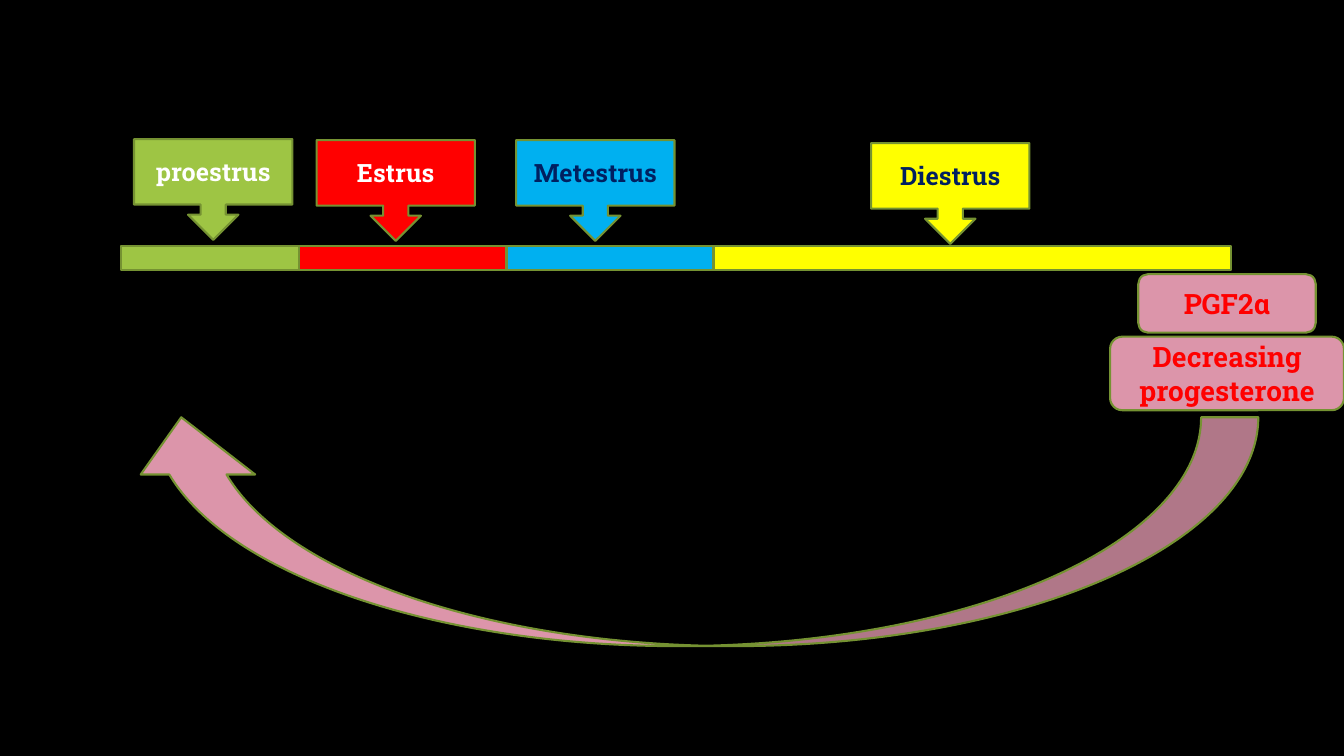
from dataclasses import dataclass

from pptx import Presentation
from pptx.dml.color import RGBColor
from pptx.enum import shapes, text
from pptx.util import Inches, Pt

MSO = shapes.MSO_SHAPE
FONT = "Roboto Slab"
COLORS = {
    "black": "000000", "white": "FFFFFF", "navy": "002060", "red": "FF0000",
    "green": "9EC544", "blue": "00B0F0", "yellow": "FFFF00", "pink": "DC95AA",
    "outline": "759232",
}


@dataclass
class Phase:
    name: str
    fill: str
    ink: str
    bar_left: float
    bar_width: float
    callout_left: float
    callout_top: float


@dataclass
class Hormone:
    name: str
    left: float
    top: float
    width: float
    height: float


PHASES = [
    Phase("proestrus", "green", "white", 0.87, 2.49, 1.33, 1.38),
    Phase("Estrus", "red", "white", 2.59, 2.82, 3.14, 1.39),
    Phase("Metestrus", "blue", "navy", 4.65, 2.82, 5.12, 1.39),
    Phase("Diestrus", "yellow", "navy", 6.15, 6.99, 8.64, 1.42),
]
HORMONES = [
    Hormone("PGF2α", 11.29, 2.72, 1.76, 0.58),
    Hormone("Decreasing progesterone", 11.01, 3.34, 2.32, 0.73),
]


def color(name: str) -> RGBColor:
    return RGBColor.from_string(COLORS[name])


def add_figure(slide, kind, left: float, top: float, width: float, height: float, fill: str):
    sp = slide.shapes.add_shape(kind, Inches(left), Inches(top), Inches(width), Inches(height))
    sp.shadow.inherit = False
    sp.fill.solid()
    sp.fill.fore_color.rgb = color(fill)
    sp.line.color.rgb = color("outline")
    sp.line.width = Pt(1.5)
    return sp


def add_label(sp, label: str, size: int, ink: str) -> None:
    tf = sp.text_frame
    tf.word_wrap = True
    tf.vertical_anchor = text.MSO_ANCHOR.MIDDLE
    p = tf.paragraphs[0]
    p.text = label
    p.alignment = text.PP_ALIGN.CENTER
    p.font.name = FONT
    p.font.size = Pt(size)
    p.font.bold = True
    p.font.color.rgb = color(ink)


def main() -> None:
    prs = Presentation()
    prs.slide_width, prs.slide_height = Inches(13.33), Inches(7.5)
    slide = prs.slides.add_slide(prs.slide_layouts[6])
    slide.background.fill.solid()
    slide.background.fill.fore_color.rgb = color("black")

    # Timeline bar: each phase overlaps the one before it
    for phase in PHASES:
        add_figure(slide, MSO.MATH_MINUS, phase.bar_left, 2.06, phase.bar_width, 1, phase.fill)

    # Phase names pointing at the bar
    for phase in PHASES:
        sp = add_figure(slide, MSO.DOWN_ARROW_CALLOUT, phase.callout_left, phase.callout_top,
                        1.57, 1, phase.fill)
        add_label(sp, phase.name, 18, phase.ink)

    # Arrow back to the start of the cycle
    arrow = add_figure(slide, MSO.CURVED_LEFT_ARROW, 5.72, -0.35, 2.27, 11.25, "pink")
    arrow.rotation = 90

    # Hormones that end the cycle
    for hormone in HORMONES:
        sp = add_figure(slide, MSO.ROUNDED_RECTANGLE, hormone.left, hormone.top,
                        hormone.width, hormone.height, "pink")
        add_label(sp, hormone.name, 20, "red")

    prs.save("out.pptx")


if __name__ == "__main__":
    main()
